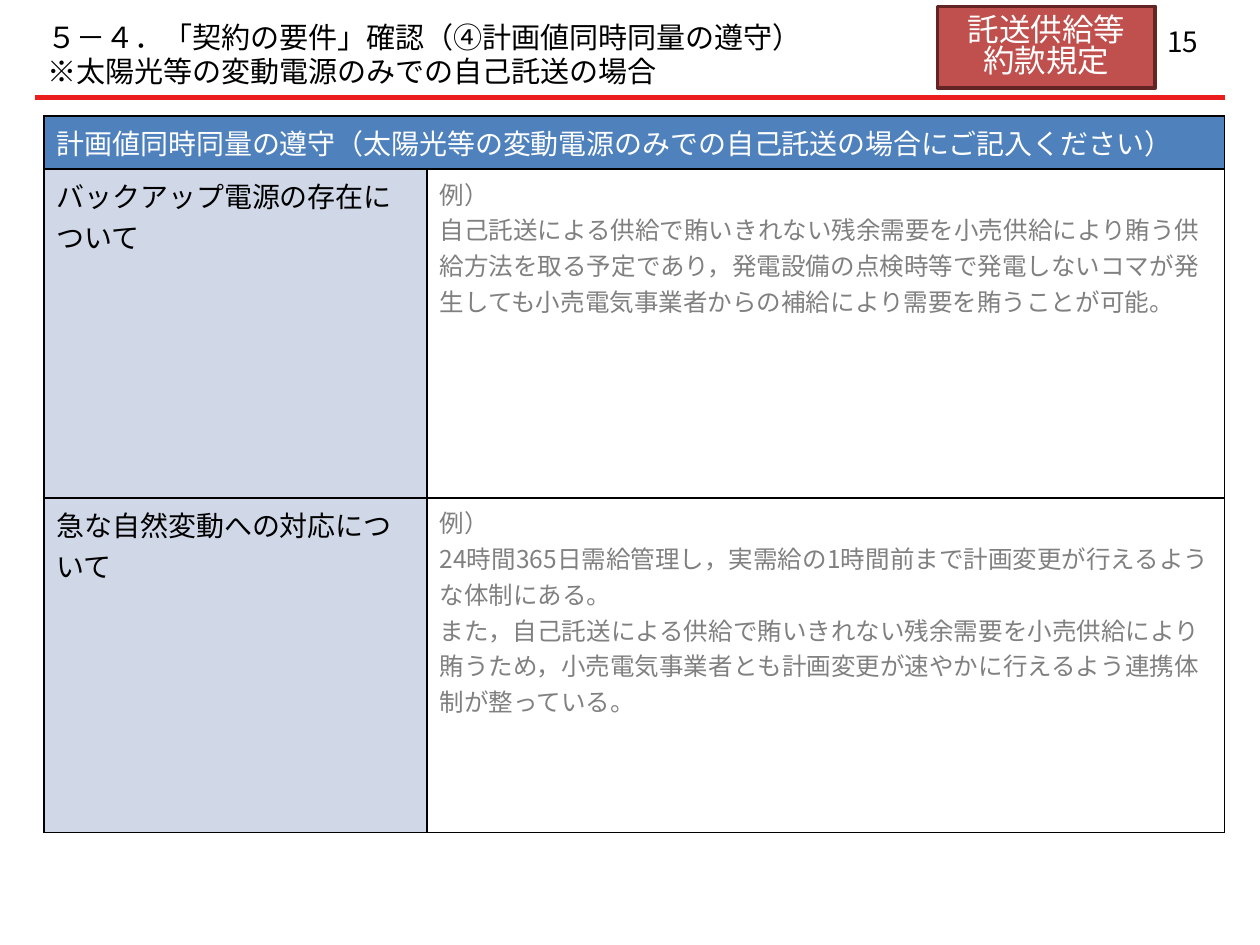
"""Build the slide on keeping to planned values when self-wheeling variable power."""
from lxml.etree import SubElement as Sub
from pptx import Presentation
from pptx.dml.color import RGBColor as Rgb
from pptx.enum.lang import MSO_LANGUAGE_ID as Lang
from pptx.enum.shapes import MSO_CONNECTOR as Conn, MSO_SHAPE as Kind
from pptx.enum.text import MSO_ANCHOR as Anchor, PP_ALIGN as Align
from pptx.oxml.ns import qn
from pptx.util import Cm, Pt

FONT = "Noto Sans CJK JP"
HUES = {
    "black": "000000", "white": "FFFFFF", "gray": "808080", "rule": "EB1E1E",
    "head": "4F81BD", "label": "D0D8E8", "stamp": "C0504D", "edge": "632523",
}


def hue(name):
    return Rgb.from_string(HUES[name])


def write(frame, lines, size, tint, **form):
    frame.word_wrap = True
    look = {"name": FONT, "size": Pt(size), "language_id": Lang.JAPANESE}
    for num, line in enumerate(lines):
        para = frame.add_paragraph() if num else frame.paragraphs[0]
        for key, val in form.items():
            setattr(para, key, val)
        run = para.add_run()
        run.text = line
        run.font.color.rgb = hue(tint)
        for key, val in look.items():
            setattr(run.font, key, val)
        Sub(run.font._element, qn("a:ea"), typeface=FONT)


deck = Presentation()
deck.slide_width, deck.slide_height = Cm(25.4), Cm(19.05)
slide = deck.slides.add_slide(deck.slide_layouts[6])
shapes = slide.shapes

rule = shapes.add_connector(Conn.STRAIGHT, Cm(0.71), Cm(1.96), Cm(24.69), Cm(1.96))
rule.line.color.rgb = hue("rule")
rule.line.width = Pt(3)
Sub(rule._element.spPr, qn("a:effectLst"))

page = shapes.add_textbox(Cm(18.49), Cm(0.33), Cm(5.92), Cm(1.02)).text_frame
page.vertical_anchor = Anchor.MIDDLE
write(page, ["15"], 16, "black", alignment=Align.RIGHT)

widths = [7.72, 16.08]
heights = [1.07, 6.63, 6.74]
rows = [
    [["計画値同時同量の遵守（太陽光等の変動電源のみでの自己託送の場合にご記入ください）"], []],
    [["バックアップ電源の存在について"], [
        "例）",
        "自己託送による供給で賄いきれない残余需要を小売供給により賄う供給方法を取る予定であり，"
        "発電設備の点検時等で発電しないコマが発生しても小売電気事業者からの補給により需要を賄うことが可能。",
    ]],
    [["急な自然変動への対応について"], [
        "例）",
        "24時間365日需給管理し，実需給の1時間前まで計画変更が行えるような体制にある。",
        "また，自己託送による供給で賄いきれない残余需要を小売供給により賄うため，"
        "小売電気事業者とも計画変更が速やかに行えるよう連携体制が整っている。",
    ]],
]
styles = {
    "head": {"size": 16, "tint": "white"},
    "label": {"size": 16, "tint": "black"},
    "white": {"size": 14, "tint": "gray"},
}
table = shapes.add_table(
    3, 2, Cm(0.89), Cm(2.34), Cm(sum(widths)), Cm(sum(heights))).table
for col, width in zip(table.columns, widths):
    col.width = Cm(width)
for row, height in zip(table.rows, heights):
    row.height = Cm(height)
table.cell(0, 0).merge(table.cell(0, 1))
for r, row in enumerate(rows):
    for c, lines in enumerate(row):
        cell = table.cell(r, c)
        props = cell._tc.get_or_add_tcPr()
        for side in "LRTB":
            edge = Sub(props, qn(f"a:ln{side}"), w=str(Pt(1)))
            Sub(Sub(edge, qn("a:solidFill")), qn("a:srgbClr"), val=HUES["black"])
        fill = "head" if r == 0 else ("label", "white")[c]
        cell.fill.solid()
        cell.fill.fore_color.rgb = hue(fill)
        write(cell.text_frame, lines, **styles[fill])

title = shapes.add_textbox(Cm(0.71), Cm(0.33), Cm(21.11), Cm(1.78)).text_frame
title.margin_top = Cm(0.1)
write(title, [
    "５－４．「契約の要件」確認（④計画値同時同量の遵守）",
    "※太陽光等の変動電源のみでの自己託送の場合",
], 16.6, "black", line_spacing=0.98)
for para in title.paragraphs:
    props = para._p.get_or_add_pPr()
    props.set("marL", str(Cm(0.97)))
    props.set("indent", str(-Cm(0.97)))

stamp = shapes.add_shape(Kind.RECTANGLE, Cm(18.9), Cm(0.13), Cm(4.39), Cm(1.65))
stamp.shadow.inherit = False
stamp.fill.solid()
stamp.fill.fore_color.rgb = hue("stamp")
stamp.line.color.rgb = hue("edge")
stamp.line.width = Pt(2)
stamp.text_frame.vertical_anchor = Anchor.MIDDLE
write(stamp.text_frame, ["託送供給等", "約款規定"], 18, "white",
      alignment=Align.CENTER, line_spacing=0.83)

deck.save("out.pptx")
